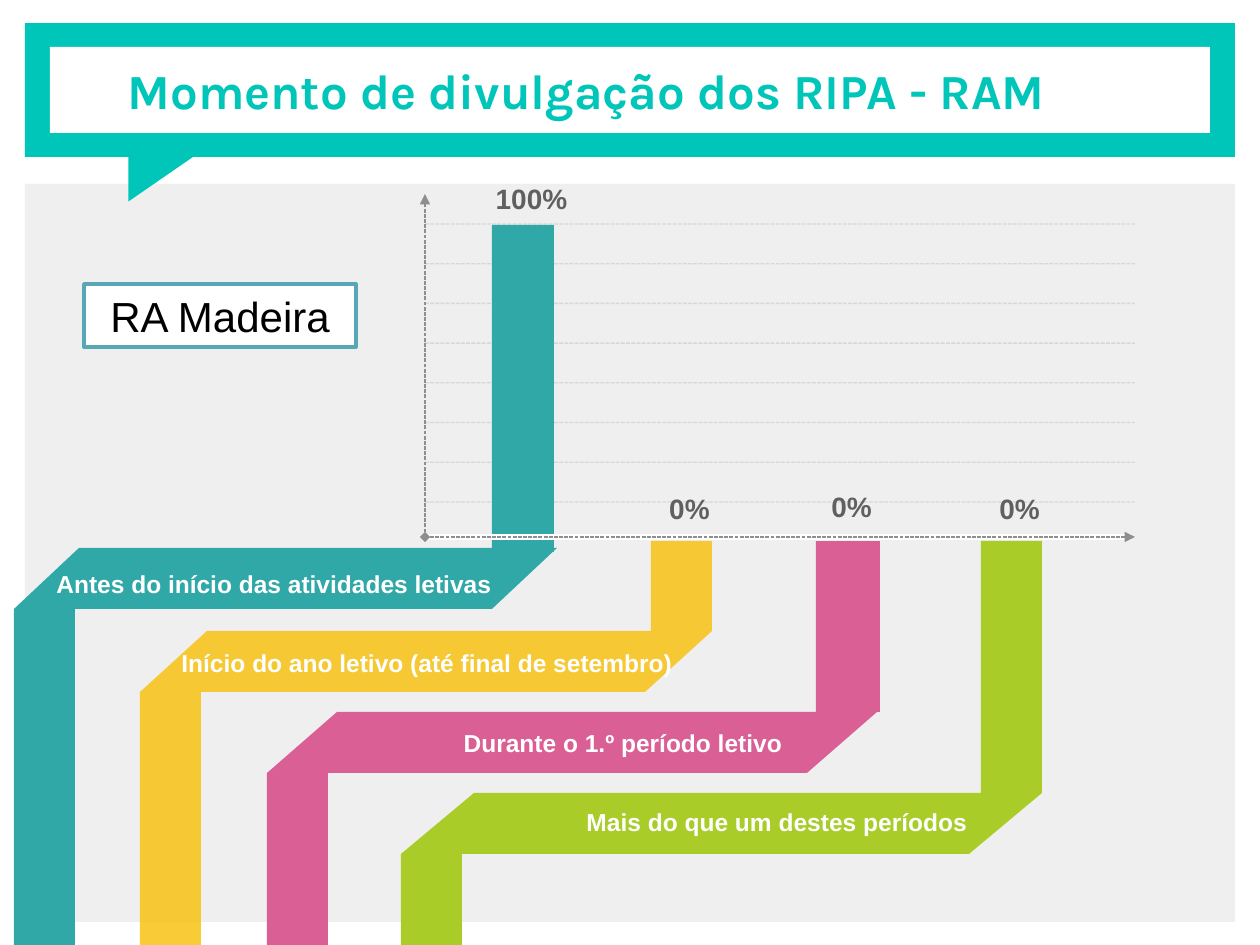
from lxml.etree import SubElement
from pptx import Presentation
from pptx.dml.color import RGBColor
from pptx.enum.dml import MSO_LINE
from pptx.enum.shapes import MSO_CONNECTOR, MSO_SHAPE
from pptx.enum.text import MSO_ANCHOR, MSO_AUTO_SIZE, PP_ALIGN
from pptx.oxml.ns import qn
from pptx.util import Emu, Pt

TURQUOISE = RGBColor(0x00, 0xC5, 0xB9)
PANEL_GRAY = RGBColor(0xEF, 0xEF, 0xEF)
AXIS_GRAY = RGBColor(0x8E, 0x8E, 0x8E)
VALUE_GRAY = RGBColor(0x60, 0x60, 0x60)
REGION_BLUE = RGBColor(0x57, 0xA7, 0xB5)
TEAL = RGBColor(0x30, 0xA8, 0xA7)
YELLOW = RGBColor(0xF8, 0xC1, 0x0C)
PINK = RGBColor(0xDA, 0x5F, 0x95)
GREEN = RGBColor(0xA9, 0xCC, 0x28)
WHITE = RGBColor(0xFF, 0xFF, 0xFF)
BLACK = RGBColor(0x00, 0x00, 0x00)

TITLE = "Momento de divulgação dos RIPA - RAM"
REGION = "RA Madeira"
SERIES = [
    {"label": "Antes do início das atividades letivas", "value": "100%",
     "color": TEAL, "opacity": 100, "left": 14, "right": 557, "top": 548, "slant": 65,
     "post": (492, 225, 62, 327), "label_box": (44, 562, 479, 43),
     "value_box": (481, 175, 101, 47), "align": PP_ALIGN.LEFT},
    {"label": "Durante o 1.º período letivo", "value": "0%",
     "color": PINK, "opacity": 100, "left": 267, "right": 877, "top": 712, "slant": 70,
     "post": (816, 541, 64, 171), "label_box": (362, 721, 522, 43),
     "value_box": (801, 483, 101, 47), "align": PP_ALIGN.CENTER},
    {"label": "Mais do que um destes períodos", "value": "0%",
     "color": GREEN, "opacity": 100, "left": 401, "right": 1042, "top": 793, "slant": 73,
     "post": (981, 541, 61, 252), "label_box": (493, 800, 568, 43),
     "value_box": (969, 485, 101, 47), "align": PP_ALIGN.CENTER},
    {"label": "Início do ano letivo (até final de setembro)", "value": "0%",
     "color": YELLOW, "opacity": 82, "left": 140, "right": 712, "top": 631, "slant": 67,
     "post": (651, 541, 61, 90), "label_box": (169, 641, 520, 43),
     "value_box": (639, 485, 101, 47), "align": PP_ALIGN.LEFT},
]

TITLE_FONT = {"name": "Karla", "size": Pt(28), "bold": True}
LABEL_FONT = {"name": "Arial", "size": Pt(14), "bold": True}
VALUE_FONT = {"name": "Arial", "size": Pt(16), "bold": True}
REGION_FONT = {"name": "Arial", "size": Pt(24), "bold": False}

SCALE = 914400 / 126
SLIDE_W, SLIDE_H = 1260, 945
RIBBON = 61
AXIS_LEFT, AXIS_RIGHT, AXIS_TOP, AXIS_Y = 425, 1135, 194, 537
GRID_TOP, GRID_BOTTOM, GRID_COUNT = 224, 502, 8


def px(*lengths):
    return [Emu(round(n * SCALE)) for n in lengths]


def set_opacity(fill_parent, percent):
    if percent < 100:
        color = fill_parent.find(".//" + qn("a:srgbClr"))
        SubElement(color, qn("a:alpha"), val=str(percent * 1000))


def paint(shape, color, opacity=100):
    shape.shadow.inherit = False
    shape.fill.solid()
    shape.fill.fore_color.rgb = color
    shape.line.fill.background()
    set_opacity(shape.element.spPr, opacity)
    return shape


def block(box, color, opacity=100, kind=MSO_SHAPE.RECTANGLE):
    return paint(slide.shapes.add_shape(kind, *px(*box)), color, opacity)


def write(shape, text, font, color, align, anchor=MSO_ANCHOR.MIDDLE):
    frame = shape.text_frame
    frame.text = text
    settings = {"word_wrap": True, "auto_size": MSO_AUTO_SIZE.NONE, "vertical_anchor": anchor}
    for name, value in settings.items():
        setattr(frame, name, value)
    paragraph = frame.paragraphs[0]
    paragraph.alignment = align
    for name, value in font.items():
        setattr(paragraph.runs[0].font, name, value)
    paragraph.runs[0].font.color.rgb = color


def dashed_line(start, end, opacity=100, **arrows):
    line = slide.shapes.add_connector(MSO_CONNECTOR.STRAIGHT, *px(*start, *end))
    line.line.color.rgb = AXIS_GRAY
    line.line.width = Pt(0.75)
    line.line.dash_style = MSO_LINE.SQUARE_DOT
    properties = line._element.spPr
    set_opacity(properties, opacity)
    for end_name, arrow in arrows.items():
        SubElement(properties.find(qn("a:ln")), qn("a:" + end_name), type=arrow)
    SubElement(properties, qn("a:effectLst"))
    return line


def ribbon(left, right, top, slant, color, opacity):
    bottom = top + RIBBON
    outline = slide.shapes.build_freeform(left + slant, top, scale=SCALE)
    outline.add_line_segments([(right, top), (right - slant, bottom), (left, bottom)], close=True)
    paint(outline.convert_to_shape(), color, opacity)


presentation = Presentation()
presentation.slide_width, presentation.slide_height = px(SLIDE_W, SLIDE_H)
slide = presentation.slides.add_slide(presentation.slide_layouts[5])

block((25, 184, 1210, 738), PANEL_GRAY)
block((25, 23, 1210, 134), TURQUOISE)
block((142, 128, 60, 87), TURQUOISE, kind=MSO_SHAPE.RIGHT_TRIANGLE).rotation = 90
block((50, 47, 1160, 86), WHITE)

title = slide.shapes.title
title.left, title.top, title.width, title.height = px(115, 23, 1096, 134)
write(title, TITLE, TITLE_FONT, TURQUOISE, PP_ALIGN.LEFT)
slide.shapes._spTree.append(title.element)

for i in range(GRID_COUNT):
    y = GRID_TOP + i * (GRID_BOTTOM - GRID_TOP) / (GRID_COUNT - 1)
    dashed_line((AXIS_LEFT, y), (AXIS_RIGHT, y), opacity=23)

for item in SERIES:
    look = item["color"], item["opacity"]
    leg_top = item["top"] + RIBBON
    block(item["post"], *look)
    ribbon(item["left"], item["right"], item["top"], item["slant"], *look)
    block((item["left"], leg_top, RIBBON, SLIDE_H - leg_top), *look)

baseline = block((AXIS_LEFT, AXIS_Y - 3, 706, 6), WHITE)
category_axis = dashed_line((AXIS_LEFT, AXIS_Y), (AXIS_RIGHT, AXIS_Y), tailEnd="triangle")
value_axis = dashed_line((AXIS_LEFT, AXIS_Y), (AXIS_LEFT, AXIS_TOP),
                         headEnd="diamond", tailEnd="triangle")
for axis in (category_axis, value_axis):
    axis.begin_connect(baseline, 1)

for item in SERIES:
    label = slide.shapes.add_textbox(*px(*item["label_box"]))
    write(label, item["label"], LABEL_FONT, WHITE, item["align"])
    value = slide.shapes.add_textbox(*px(*item["value_box"]))
    write(value, item["value"], VALUE_FONT, VALUE_GRAY, PP_ALIGN.CENTER, MSO_ANCHOR.TOP)

region = block((84, 284, 272, 63), WHITE)
region.line.color.rgb = REGION_BLUE
region.line.width = Pt(2)
write(region, REGION, REGION_FONT, BLACK, PP_ALIGN.CENTER)

presentation.save("out.pptx")
